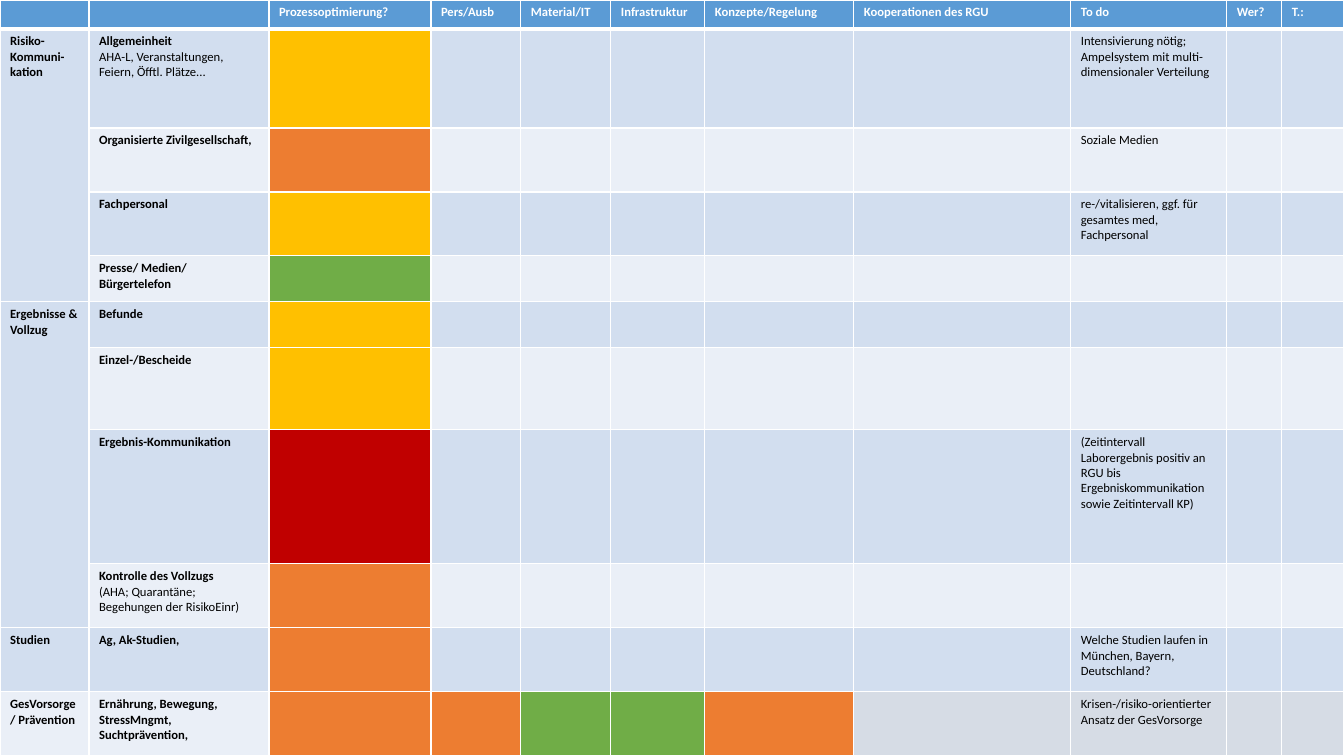
from lxml import etree
from pptx import Presentation, util as u
from pptx.dml import color
from pptx.oxml import ns

PX = 914400 / 100.8
WHITE, BLACK, BLUE = "FFFFFF", "000000", "5B9BD5"
BANDS = ["D2DEEF", "EAEFF7"]
GRAY = "D6DCE5"
TINTS = {"Y": "FFC000", "O": "ED7D31", "G": "70AD47", "R": "C00000"}

COLS = [89, 180, 162, 90, 90, 94, 149, 217, 156, 55, 62]
HEADS = ["", "", "Prozessoptimierung?", "Pers/Ausb", "Material/IT", "Infrastruktur",
         "Konzepte/Regelung", "Kooperationen des RGU", "To do", "Wer?", "T.:"]
HEAD = 29
ROWS = [
    (99, "Risiko-Kommuni-kation",
     "Allgemeinheit\nAHA-L, Veranstaltungen, Feiern, Öfftl. Plätze...", "Y",
     "Intensivierung nötig;\nAmpelsystem mit multi-dimensionaler Verteilung"),
    (64, "", "Organisierte Zivilgesellschaft,", "O", "Soziale Medien"),
    (64, "", "Fachpersonal", "Y", "re-/vitalisieren, ggf. für gesamtes med, Fachpersonal"),
    (46, "", "Presse/ Medien/ Bürgertelefon", "G", ""),
    (46, "Ergebnisse &\nVollzug", "Befunde", "Y", ""),
    (82, "", "Einzel-/Bescheide", "Y", ""),
    (134, "", "Ergebnis-Kommunikation", "R",
     "(Zeitintervall Laborergebnis positiv an RGU bis "
     "Ergebniskommunikation sowie Zeitintervall KP)"),
    (64, "", "Kontrolle des Vollzugs\n(AHA; Quarantäne; Begehungen der RisikoEinr)", "O", ""),
    (64, "Studien", "Ag, Ak-Studien,", "O",
     "Welche Studien laufen in München, Bayern, Deutschland?"),
    (64, "GesVorsorge/ Prävention", "Ernährung, Bewegung, StressMngmt, Suchtprävention,",
     "OOGGO", "Krisen-/risiko-orientierter Ansatz der GesVorsorge"),
]
SPANS = [(1, 4), (5, 8)]


def px(n):
    return u.Emu(round(n * PX))


def rgb(tint):
    return color.RGBColor.from_string(tint)


class Deck:
    """Holds the text style and the current slide."""

    face, size = "Calibri", 9

    def __init__(self, wide, high):
        self.prs = Presentation()
        self.prs.slide_width, self.prs.slide_height = px(wide), px(high)
        self.slide = self.prs.slides.add_slide(self.prs.slide_layouts[6])

    def table(self, cols, rows):
        frame = self.slide.shapes.add_table(
            len(rows), len(cols), 0, 0, px(sum(cols)), px(sum(rows)))
        grid = frame.table
        grid.first_row = grid.horz_banding = False
        for col, wide in zip(grid.columns, cols):
            col.width = px(wide)
        for row, high in zip(grid.rows, rows):
            row.height = px(high)
        return grid

    def edge(self, cell, side, width):
        props = cell._tc.get_or_add_tcPr()
        line = etree.SubElement(props, ns.qn("a:ln" + side), w=str(u.Pt(width)))
        fill = etree.SubElement(line, ns.qn("a:solidFill"))
        etree.SubElement(fill, ns.qn("a:srgbClr"), val=WHITE)

    def cell(self, cell, words, fill, ink=BLACK, bolds=0, top=1, base=1):
        for side, width in zip("LRTB", (1, 1, top, base)):
            self.edge(cell, side, width)
        cell.fill.solid()
        cell.fill.fore_color.rgb = rgb(fill)
        cell.text = words
        for i, para in enumerate(cell.text_frame.paragraphs):
            font = para.font
            font.name, font.size = self.face, u.Pt(self.size)
            font.bold = i < bolds
            font.color.rgb = rgb(ink)
            if not words:
                para._p.get_or_add_endParaRPr().set("sz", str(self.size * 100))

    def save(self):
        self.prs.save("out.pptx")


def main():
    deck = Deck(1344, 756)
    grid = deck.table(COLS, [HEAD] + [row[0] for row in ROWS])
    for c, words in enumerate(HEADS):
        deck.cell(grid.cell(0, c), words, BLUE, WHITE, bolds=1, base=3)
    for r, (_, group, topic, marks, todo) in enumerate(ROWS, 1):
        band = BANDS[(r - 1) % 2]
        rest = GRAY if r == len(ROWS) else band
        fills = [band, band] + [TINTS[m] for m in marks]
        fills += [rest] * (len(COLS) - len(fills))
        texts = {0: group, 1: topic, 8: todo}
        bolds = {0: 2, 1: 1}
        for c, fill in enumerate(fills):
            deck.cell(grid.cell(r, c), texts.get(c, ""), fill,
                      bolds=bolds.get(c, 0), top=3 if r == 1 else 1)
    for first, last in SPANS:
        grid.cell(first, 0).merge(grid.cell(last, 0))
    deck.save()


if __name__ == "__main__":
    main()
